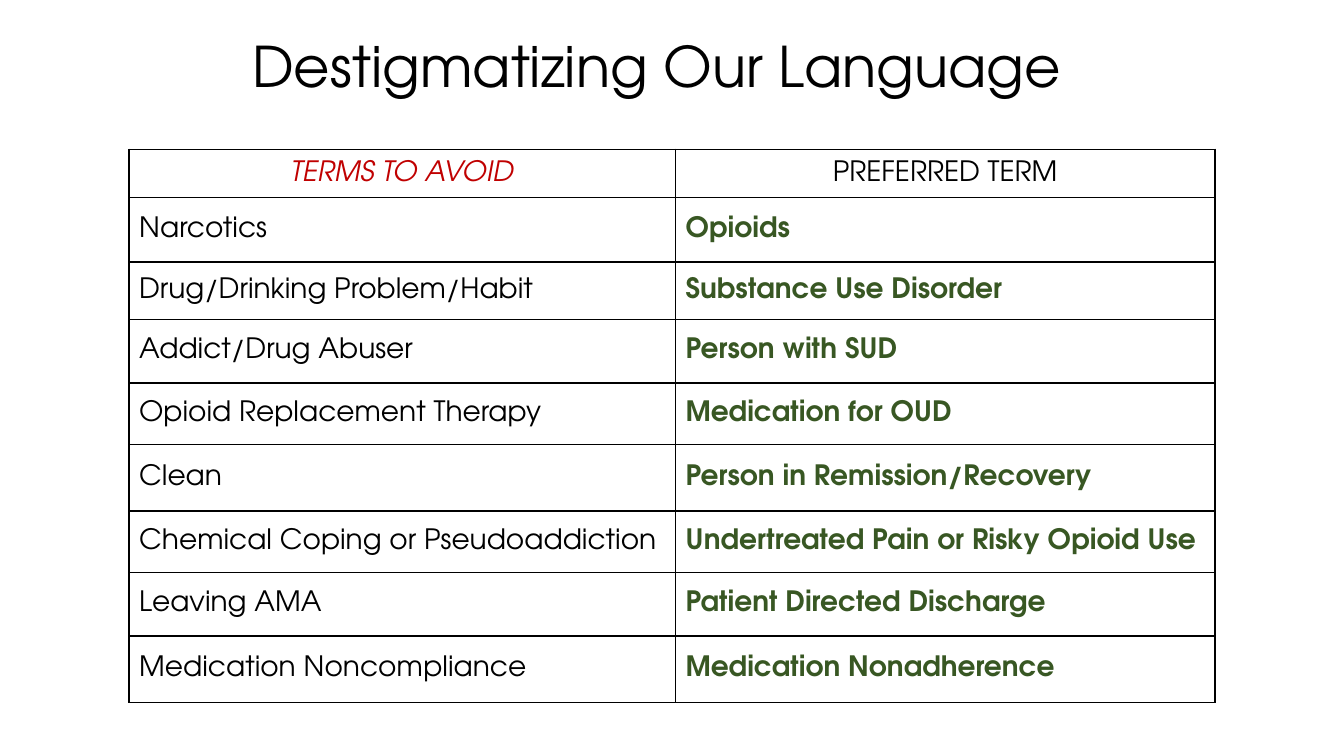
"""Build the slide on destigmatizing language."""
from dataclasses import dataclass

from lxml.etree import SubElement
from pptx import Presentation
from pptx.dml.color import RGBColor
from pptx.enum.text import MSO_ANCHOR, PP_ALIGN
from pptx.oxml.ns import qn
from pptx.util import Inches, Pt

TITLE = "Destigmatizing Our Language"
HEADS = ("TERMS TO AVOID", "PREFERRED TERM")
TERMS = [
    ("Narcotics", "Opioids"),
    ("Drug/Drinking Problem/Habit", "Substance Use Disorder"),
    ("Addict/Drug Abuser", "Person with SUD"),
    ("Opioid Replacement Therapy", "Medication for OUD"),
    ("Clean", "Person in Remission/Recovery"),
    ("Chemical Coping or Pseudoaddiction", "Undertreated Pain or Risky Opioid Use"),
    ("Leaving AMA", "Patient Directed Discharge"),
    ("Medication Noncompliance", "Medication Nonadherence"),
]
WIDTHS = (5.42, 5.35)
HEIGHTS = (0.48, 0.64, 0.57, 0.63, 0.61, 0.66, 0.61, 0.63, 0.66)


@dataclass(frozen=True)
class Theme:
    """Hold the colours, font and sizes."""
    font: str = "TeX Gyre Adventor"
    ink: str = "000000"
    avoid: str = "C00000"
    prefer: str = "385723"
    title: int = 40
    body: int = 20
    thin: float = 1
    thick: float = 1.5


THEME = Theme()


def style(para, size, color, align, bold=False, italic=False):
    """Format a paragraph and its runs."""
    para.alignment = align
    for run in para.runs:
        font = run.font
        font.name, font.size = THEME.font, Pt(size)
        font.bold, font.italic = bold, italic
        font.color.rgb = RGBColor.from_string(color)


def border(cell, top, bottom):
    """Draw the four edges of a cell."""
    props = cell._tc.get_or_add_tcPr()
    edges = {"lnL": THEME.thin, "lnR": THEME.thin, "lnT": top, "lnB": bottom}
    for tag, width in edges.items():
        line = SubElement(props, qn(f"a:{tag}"), w=str(Pt(width)))
        fill = SubElement(line, qn("a:solidFill"))
        SubElement(fill, qn("a:srgbClr"), val=THEME.ink)


def add_title(slide):
    """Place the slide title."""
    title = slide.shapes.title
    title.left, title.top = Inches(2.05), Inches(0.18)
    title.width, title.height = Inches(8.92), Inches(1.01)
    frame = title.text_frame
    frame.text = TITLE
    frame.vertical_anchor = MSO_ANCHOR.MIDDLE
    frame.paragraphs[0].line_spacing = 0.9
    style(frame.paragraphs[0], THEME.title, THEME.ink, PP_ALIGN.CENTER)


def add_terms(slide):
    """Place the table of terms."""
    rows = [HEADS, *TERMS]
    table = slide.shapes.add_table(
        len(rows), len(HEADS), Inches(1.28), Inches(1.48),
        Inches(sum(WIDTHS)), Inches(sum(HEIGHTS))).table
    table.first_row = table.horz_banding = False
    for col, width in zip(table.columns, WIDTHS):
        col.width = Inches(width)
    for r, (words, height) in enumerate(zip(rows, HEIGHTS)):
        table.rows[r].height = Inches(height)
        head = r == 0
        colors = (THEME.avoid, THEME.ink) if head else (THEME.ink, THEME.prefer)
        align = PP_ALIGN.CENTER if head else PP_ALIGN.LEFT
        for c, word in enumerate(words):
            cell = table.cell(r, c)
            cell.text = word
            cell.vertical_anchor = MSO_ANCHOR.MIDDLE
            border(cell, THEME.thick if r == 1 else THEME.thin,
                   THEME.thick if head else THEME.thin)
            cell.fill.background()
            style(cell.text_frame.paragraphs[0], THEME.body, colors[c], align,
                  bold=not head and c == 1, italic=head and c == 0)


def main():
    """Make and save the deck."""
    deck = Presentation()
    deck.slide_width, deck.slide_height = Inches(13.33), Inches(7.5)
    slide = deck.slides.add_slide(deck.slide_layouts[5])
    add_title(slide)
    add_terms(slide)
    deck.save("out.pptx")


if __name__ == "__main__":
    main()
